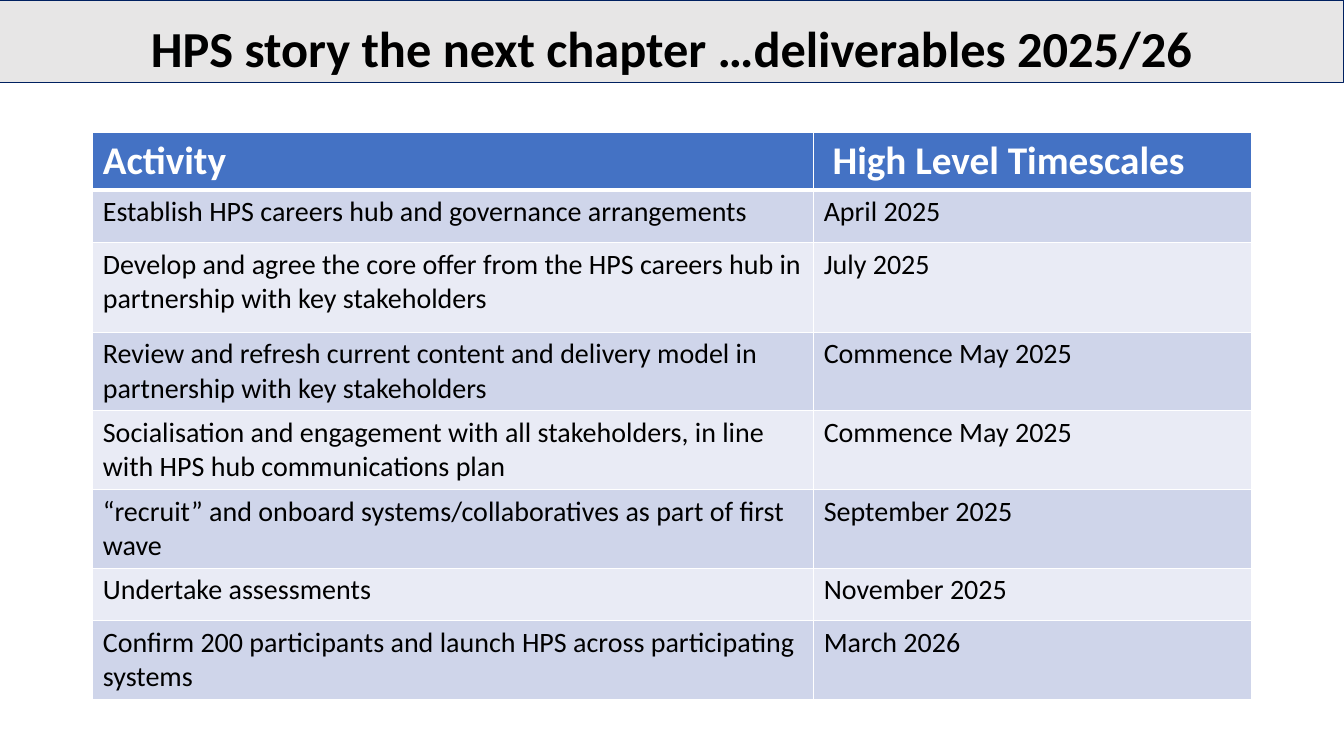
"""Build the HPS deliverables slide with its activity timetable."""
from dataclasses import dataclass

from lxml.etree import SubElement
from pptx import Presentation
from pptx.dml.color import RGBColor
from pptx.enum.shapes import MSO_SHAPE
from pptx.enum.text import MSO_ANCHOR, PP_ALIGN
from pptx.oxml.ns import qn
from pptx.slide import Slide
from pptx.table import _Cell
from pptx.text.text import _Paragraph
from pptx.util import Inches, Pt

FONT = "Calibri"
WHITE, BLACK, NAVY = "FFFFFF", "000000", "002060"
BANNER_GREY, HEADER_BLUE = "E7E6E6", "4472C4"
BANDS = ("CFD5EA", "E9EBF5")
COLUMN_WIDTHS = (7.15, 4.34)


@dataclass(frozen=True)
class Deliverable:
    activity: str
    timescale: str
    height: float = 0.52


@dataclass(frozen=True)
class RowStyle:
    fill: str
    color: str
    size: float
    bold: bool
    bottom_border: float


HEADER = Deliverable("Activity", " High Level Timescales")
DELIVERABLES = (
    Deliverable("Establish HPS careers hub and governance arrangements", "April 2025"),
    Deliverable("Develop and agree the core offer from the HPS careers hub in "
                "partnership with key stakeholders", "July 2025", 0.89),
    Deliverable("Review and refresh current content and delivery model in "
                "partnership with key stakeholders", "Commence May 2025", 0.64),
    Deliverable("Socialisation and engagement with all stakeholders, in line "
                "with HPS hub communications plan", "Commence May 2025", 0.64),
    Deliverable("“recruit” and onboard systems/collaboratives as part of first wave",
                "September 2025"),
    Deliverable("Undertake assessments", "November 2025"),
    Deliverable("Confirm 200 participants and launch HPS across participating systems",
                "March 2026"),
)


def rgb(value: str) -> RGBColor:
    return RGBColor.from_string(value)


def add_text(para: _Paragraph, text: str, size: float, color: str, bold: bool) -> None:
    span = para.add_run()
    span.text = text
    span.font.name = FONT
    span.font.size = Pt(size)
    span.font.bold = bold
    span.font.color.rgb = rgb(color)


def add_banner(page: Slide, title: str) -> None:
    box = page.shapes.add_shape(
        MSO_SHAPE.RECTANGLE, 0, 0, Inches(13.33), Inches(0.82))
    box.shadow.inherit = False
    box.fill.solid()
    box.fill.fore_color.rgb = rgb(BANNER_GREY)
    box.line.color.rgb = rgb(NAVY)
    box.line.width = Pt(0.75)
    box.text_frame.word_wrap = True
    box.text_frame.vertical_anchor = MSO_ANCHOR.BOTTOM
    para = box.text_frame.paragraphs[0]
    para.alignment = PP_ALIGN.CENTER
    add_text(para, title, 36, BLACK, True)


def set_borders(cell: _Cell, top: float, bottom: float) -> None:
    properties = cell._tc.get_or_add_tcPr()
    widths = {"a:lnL": 1, "a:lnR": 1, "a:lnT": top, "a:lnB": bottom}
    for position, (tag, width) in enumerate(widths.items()):
        border = SubElement(properties, qn(tag), w=str(Pt(width)))
        fill = SubElement(border, qn("a:solidFill"))
        SubElement(fill, qn("a:srgbClr"), val=WHITE)
        properties.insert(position, border)


def fill_cell(cell: _Cell, text: str, style: RowStyle, top_border: float) -> None:
    cell.fill.solid()
    cell.fill.fore_color.rgb = rgb(style.fill)
    set_borders(cell, top_border, style.bottom_border)
    add_text(cell.text_frame.paragraphs[0], text, style.size, style.color, style.bold)


def add_timetable(page: Slide) -> None:
    entries = (HEADER, *DELIVERABLES)
    header_style = RowStyle(HEADER_BLUE, WHITE, 28, True, 3)
    band_styles = [RowStyle(band, BLACK, 20, False, 1) for band in BANDS]
    table = page.shapes.add_table(
        len(entries), len(COLUMN_WIDTHS), Inches(0.92), Inches(1.31),
        Inches(sum(COLUMN_WIDTHS)), Inches(sum(entry.height for entry in entries))).table
    for column, width in zip(table.columns, COLUMN_WIDTHS):
        column.width = Inches(width)
    top_border = 1
    for index, (row, entry) in enumerate(zip(table.rows, entries)):
        row.height = Inches(entry.height)
        style = band_styles[(index - 1) % 2] if index else header_style
        for cell, text in zip(row.cells, (entry.activity, entry.timescale)):
            fill_cell(cell, text, style, top_border)
        top_border = style.bottom_border


def main() -> None:
    deck = Presentation()
    deck.slide_width, deck.slide_height = Inches(13.33), Inches(7.5)
    page = deck.slides.add_slide(deck.slide_layouts[6])
    add_banner(page, "HPS story the next chapter …deliverables 2025/26")
    add_timetable(page)
    deck.save("out.pptx")


if __name__ == "__main__":
    main()
